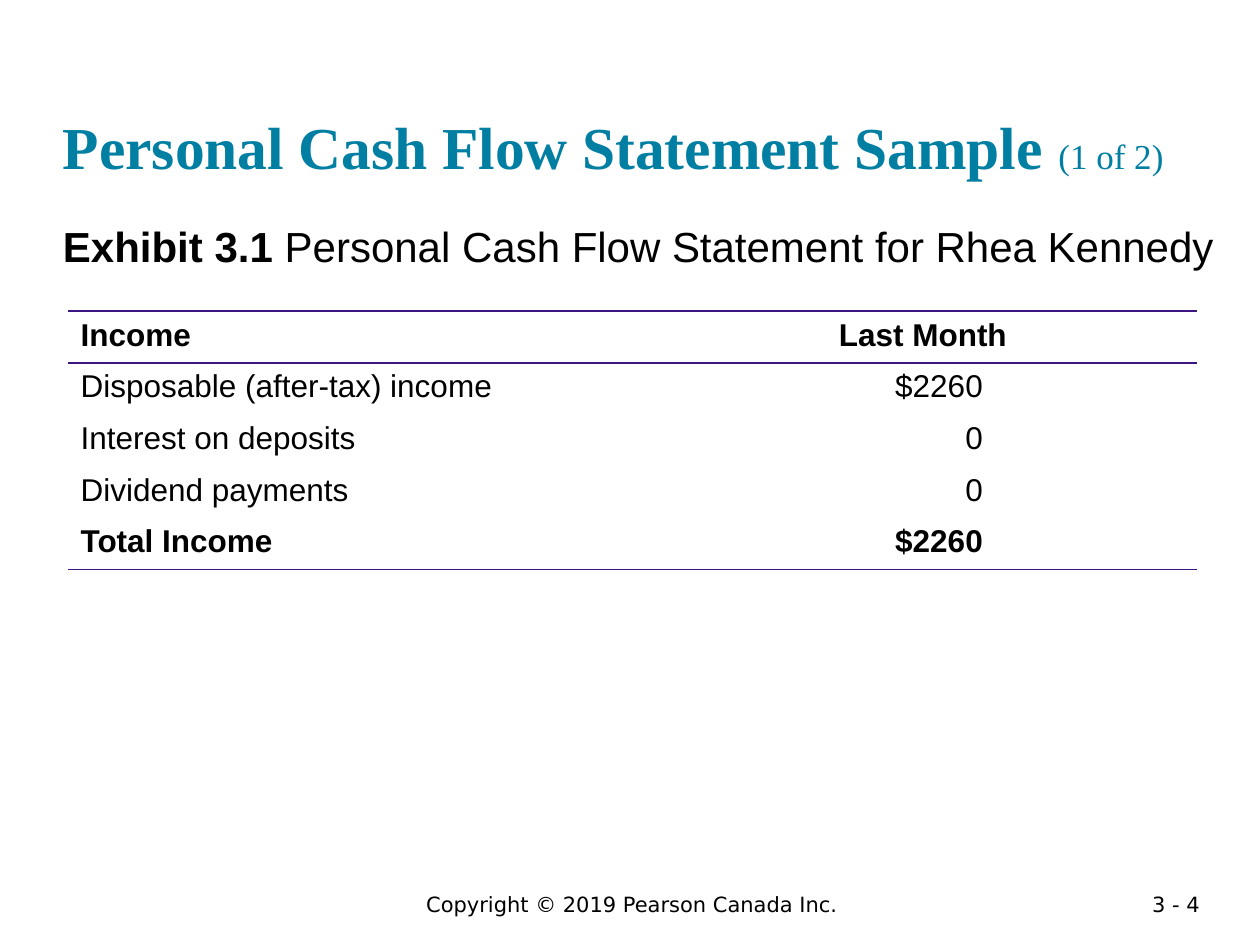
from dataclasses import dataclass

from lxml.etree import SubElement
from pptx import Presentation
from pptx.dml.color import RGBColor
from pptx.enum.text import MSO_ANCHOR, PP_ALIGN
from pptx.oxml.ns import qn
from pptx.util import Inches, Pt


@dataclass(frozen=True)
class Theme:
    ink: str = "000000"
    teal: str = "007FA3"
    rule: str = "3C1581"
    sans: str = "Arial"
    serif: str = "Times New Roman"
    small: str = "DejaVu Sans"
    title: int = 34
    count: int = 20
    lead: int = 24
    cell: int = 18
    foot: int = 12


@dataclass(frozen=True)
class Row:
    label: str
    amount: str
    bold: bool = False
    head: bool = False
    edges: tuple[str, ...] = ()


THEME = Theme()
ROWS = [
    Row("Income", "Last Month", bold=True, head=True, edges=("T", "B")),
    Row("Disposable (after-tax) income", "$2260"),
    Row("Interest on deposits", "0"),
    Row("Dividend payments", "0"),
    Row("Total Income", "$2260", bold=True, edges=("B",)),
]
COLS = (4.61, 4.35)
ROW_H = 0.41
NO_STYLE = "{2D5ABB26-0587-4C30-8999-92F81FD0307C}"


def put(frame, text: str, *, size: int, face: str = THEME.sans,
        color: str = THEME.ink, bold: bool = False, align=PP_ALIGN.LEFT) -> None:
    """Add a run to the first paragraph of a text frame."""
    line = frame.paragraphs[0]
    line.alignment = align
    run = line.add_run()
    run.text = text
    font = run.font
    font.name, font.size, font.bold = face, Pt(size), bold
    font.color.rgb = RGBColor.from_string(color)


def add_box(slide, left: float, top: float, width: float, height: float,
            inset: bool = False, anchor=MSO_ANCHOR.TOP):
    box = slide.shapes.add_textbox(
        Inches(left), Inches(top), Inches(width), Inches(height))
    frame = box.text_frame
    frame.word_wrap = True
    frame.vertical_anchor = anchor
    if not inset:
        frame.margin_left = frame.margin_right = 0
        frame.margin_top = frame.margin_bottom = 0
    return frame


def add_edge(cell, side: str) -> None:
    props = cell._tc.get_or_add_tcPr()
    edge = SubElement(props, qn(f"a:ln{side}"), w=str(Pt(1)))
    fill = SubElement(edge, qn("a:solidFill"))
    SubElement(fill, qn("a:srgbClr"), val=THEME.rule)


def add_cell(cell, text: str, row: Row, align) -> None:
    for side in row.edges:
        add_edge(cell, side)
    cell.fill.background()
    if align == PP_ALIGN.RIGHT:
        cell.margin_right = Inches(1.7)
    put(cell.text_frame, text, size=THEME.cell, bold=row.bold, align=align)


def add_grid(slide, rows: list[Row]) -> None:
    frame = slide.shapes.add_table(
        len(rows), len(COLS), Inches(0.54), Inches(2.47),
        Inches(sum(COLS)), Inches(ROW_H * len(rows)))
    table = frame.table
    table.first_row = table.horz_banding = False
    table._tbl.tblPr.find(qn("a:tableStyleId")).text = NO_STYLE
    for col, width in zip(table.columns, COLS):
        col.width = Inches(width)
    for i, row in enumerate(rows):
        table.rows[i].height = Inches(ROW_H)
        add_cell(table.cell(i, 0), row.label, row, PP_ALIGN.LEFT)
        add_cell(table.cell(i, 1), row.amount, row,
                 PP_ALIGN.CENTER if row.head else PP_ALIGN.RIGHT)


def main() -> None:
    deck = Presentation()
    deck.slide_width, deck.slide_height = Inches(10), Inches(7.5)
    slide = deck.slides.add_slide(deck.slide_layouts[6])

    title = add_box(slide, 0.5, 0.24, 9, 1.2, anchor=MSO_ANCHOR.BOTTOM)
    put(title, "Personal Cash Flow Statement Sample ", size=THEME.title,
        face=THEME.serif, color=THEME.teal, bold=True)
    put(title, "(1 of 2)", size=THEME.count, face=THEME.serif, color=THEME.teal)

    lead = add_box(slide, 0.5, 1.75, 9.17, 0.42)
    put(lead, "Exhibit 3.1", size=THEME.lead, bold=True)
    put(lead, " Personal Cash Flow Statement for Rhea Kennedy", size=THEME.lead)

    add_grid(slide, ROWS)

    foot = add_box(slide, 1.64, 7.03, 6.75, 0.3, inset=True)
    put(foot, "Copyright © 2019 Pearson Canada Inc.", size=THEME.foot,
        face=THEME.small, align=PP_ALIGN.CENTER)
    page = add_box(slide, 8.62, 7.03, 1, 0.22, inset=True)
    put(page, "3 - 4", size=THEME.foot, face=THEME.small, align=PP_ALIGN.RIGHT)

    deck.save("out.pptx")


if __name__ == "__main__":
    main()
